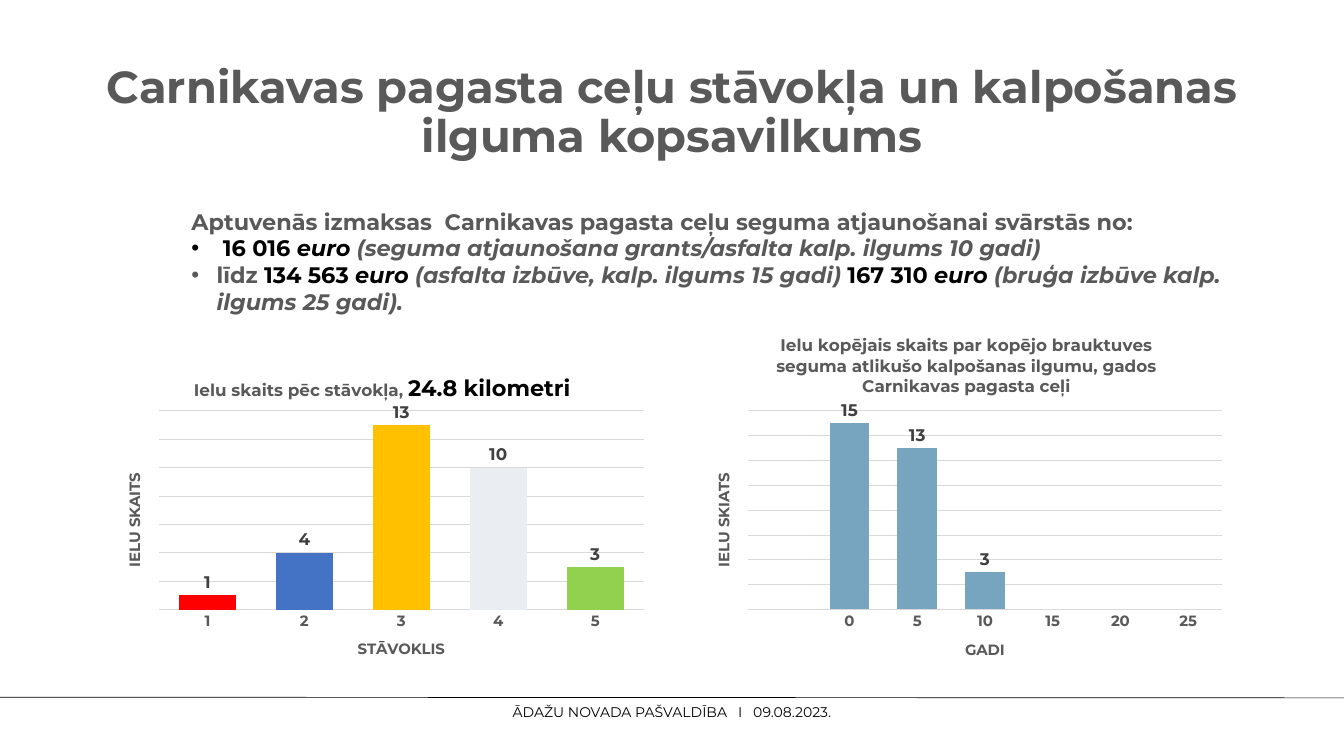
import pptx
import pptx.util
import pptx.chart.data
import pptx.dml.color
import pptx.enum.chart
import pptx.enum.shapes
import pptx.enum.text
import pptx.oxml
import pptx.oxml.ns

PX = 9525  # 96 px to the inch
FONT = "Montserrat"
GREY, BLACK, GRID = "595959", "000000", "D9D9D9"
PLOT_LEFT, PLOT_WIDTH = 0.09, 0.89


def rgb(value):
    return pptx.dml.color.RGBColor.from_string(value)


def write(paragraph, text, size, color=GREY, bold=True, italic=False):
    run = paragraph.add_run()
    run.text = text
    font = run.font
    font.name, font.size = FONT, pptx.util.Pt(size)
    font.bold, font.italic = bold, italic
    font.color.rgb = rgb(color)


deck = pptx.Presentation()
deck.slide_width, deck.slide_height = 1920 * PX, 1080 * PX
slide = deck.slides.add_slide(deck.slide_layouts[5])

# Heading
heading = slide.shapes.title
heading.left, heading.top, heading.width, heading.height = [
    n * PX for n in (132, 58, 1656, 208)]
heading.text_frame.vertical_anchor = pptx.enum.text.MSO_ANCHOR.MIDDLE
heading_line = heading.text_frame.paragraphs[0]
heading_line.alignment = pptx.enum.text.PP_ALIGN.CENTER
heading_line.line_spacing = 0.9
write(heading_line, "Carnikavas pagasta ceļu stāvokļa un kalpošanas ilguma kopsavilkums", 48)

# Costs: (text, color, italic) runs, every line after the first bulleted
cost_lines = [
    [("Aptuvenās izmaksas  Carnikavas pagasta ceļu seguma atjaunošanai svārstās no:", GREY, False)],
    [(" 16 016 ", BLACK, False), ("euro ", BLACK, True),
     ("(seguma atjaunošana grants/asfalta kalp. ilgums 10 gadi)", GREY, True)],
    [("līdz ", GREY, False), ("134 563 ", BLACK, False), ("euro ", BLACK, True),
     ("(asfalta izbūve, kalp. ilgums 15 gadi) ", GREY, True),
     ("167 310 ", BLACK, False), ("euro ", BLACK, True),
     ("(bruģa izbūve kalp. ilgums 25 gadi).", GREY, True)],
]
costs = slide.shapes.add_textbox(264 * PX, 292 * PX, 1560 * PX, 165 * PX).text_frame
costs.word_wrap = True
for i, runs in enumerate(cost_lines):
    line = costs.add_paragraph() if i else costs.paragraphs[0]
    for text, color, italic in runs:
        write(line, text, 24, color=color, italic=italic)
    if i:
        props = line._p.get_or_add_pPr()
        props.set("marL", str(36 * PX))
        props.set("indent", str(-36 * PX))
        bullet_font = pptx.oxml.ns.qn("a:buFont")
        props.append(props.makeelement(bullet_font, {"typeface": "Arial"}))
        props.append(props.makeelement(pptx.oxml.ns.qn("a:buChar"), {"char": "•"}))

# Charts
street_charts = [
    dict(box=(157, 516, 778, 448), plot_top=0.158, plot_height=0.634, top_value=14,
         title=[("Ielu skaits pēc stāvokļa, ", 18, GREY), ("24.8 kilometri", 24, BLACK)],
         across="STĀVOKLIS", up="IELU SKAITS", names=["1", "2", "3", "4", "5"],
         counts=[1, 4, 13, 10, 3], fill="4472C4",
         bars={0: "FF0000", 2: "FFC000", 3: "EAEDF2", 4: "92D050"}),
    dict(box=(1000, 457, 761, 507), plot_top=0.256, plot_height=0.56, top_value=16,
         title=[("Ielu kopējais skaits par kopējo brauktuves seguma atlikušo kalpošanas "
                 "ilgumu, gados Carnikavas pagasta ceļi", 18, GREY)],
         across="GADI", up="IELU SKIATS", names=["", "0", "5", "10", "15", "20", "25"],
         counts=[None, 15, 13, 3, None, None, None], fill="77A4BE", bars={}),
]
for part in street_charts:
    data = pptx.chart.data.CategoryChartData()
    data.categories = part["names"]
    data.add_series("Series 1", part["counts"])
    chart = slide.shapes.add_chart(
        pptx.enum.chart.XL_CHART_TYPE.COLUMN_CLUSTERED,
        *[n * PX for n in part["box"]], data).chart
    chart.has_legend = False
    chart.font.name, chart.font.size = FONT, pptx.util.Pt(10)
    for text, size, color in part["title"]:
        write(chart.chart_title.text_frame.paragraphs[0], text, size, color=color)
    chart.chart_title.include_in_layout = False

    # Axes
    streets, counts = chart.category_axis, chart.value_axis
    for axis, name in ((streets, part["across"]), (counts, part["up"])):
        axis.major_tick_mark = pptx.enum.chart.XL_TICK_MARK.NONE
        write(axis.axis_title.text_frame.paragraphs[0], name, 16)
    streets.format.line.fill.background()
    labels = streets.tick_labels.font
    labels.name, labels.size, labels.bold = FONT, pptx.util.Pt(16), True
    labels.color.rgb = rgb(GREY)
    turn = counts.axis_title.text_frame._txBody.bodyPr
    turn.set("rot", "-5400000")
    turn.set("vert", "horz")
    counts.visible = False
    counts.minimum_scale, counts.maximum_scale, counts.major_unit = 0, part["top_value"], 2
    counts.major_gridlines.format.line.color.rgb = rgb(GRID)
    counts.major_gridlines.format.line.width = pptx.util.Pt(0.75)

    # Columns and their values
    plot = chart.plots[0]
    plot.gap_width, plot.vary_by_categories = 70, False
    columns = plot.series[0]
    columns.format.fill.solid()
    columns.format.fill.fore_color.rgb = rgb(part["fill"])
    for i, color in part["bars"].items():
        bar = columns.points[i].format.fill
        bar.solid()
        bar.fore_color.rgb = rgb(color)
    values = columns.data_labels
    values.show_value = True
    values.position = pptx.enum.chart.XL_LABEL_POSITION.OUTSIDE_END
    values.font.name, values.font.size, values.font.bold = FONT, pptx.util.Pt(18), True
    values.font.color.rgb = rgb("404040")

    # Inner plot area, as shares of the chart
    area = chart._chartSpace.chart.plotArea
    for old in area.findall(pptx.oxml.ns.qn("c:layout")):
        area.remove(old)
    area.insert(0, pptx.oxml.parse_xml(
        f'<c:layout {pptx.oxml.ns.nsdecls("c")}><c:manualLayout>'
        '<c:layoutTarget val="inner"/><c:xMode val="edge"/><c:yMode val="edge"/>'
        f'<c:x val="{PLOT_LEFT}"/><c:y val="{part["plot_top"]}"/>'
        f'<c:w val="{PLOT_WIDTH}"/><c:h val="{part["plot_height"]}"/>'
        '</c:manualLayout></c:layout>'))

# Footer rule
rule = slide.shapes.add_connector(
    pptx.enum.shapes.MSO_CONNECTOR.STRAIGHT, -1 * PX, 996 * PX, 1921 * PX, 997 * PX)
rule.line.color.rgb = rgb(BLACK)
rule.line.width = pptx.util.Pt(0.75)
rule_props = rule._element.spPr
rule_props.append(rule_props.makeelement(pptx.oxml.ns.qn("a:effectLst"), {}))

# Footer text
footer = slide.shapes.add_textbox(10 * PX, 1005 * PX, 1900 * PX, 24 * PX).text_frame
footer.word_wrap = True
footer.margin_left = footer.margin_right = footer.margin_top = footer.margin_bottom = 0
footer_line = footer.paragraphs[0]
footer_line.alignment = pptx.enum.text.PP_ALIGN.CENTER
footer_line.line_spacing = pptx.util.Pt(18)
write(footer_line, "ĀDAŽU NOVADA PAŠVALDĪBA   I   09.08.2023.", 15, color=BLACK, bold=False)

deck.save("out.pptx")
